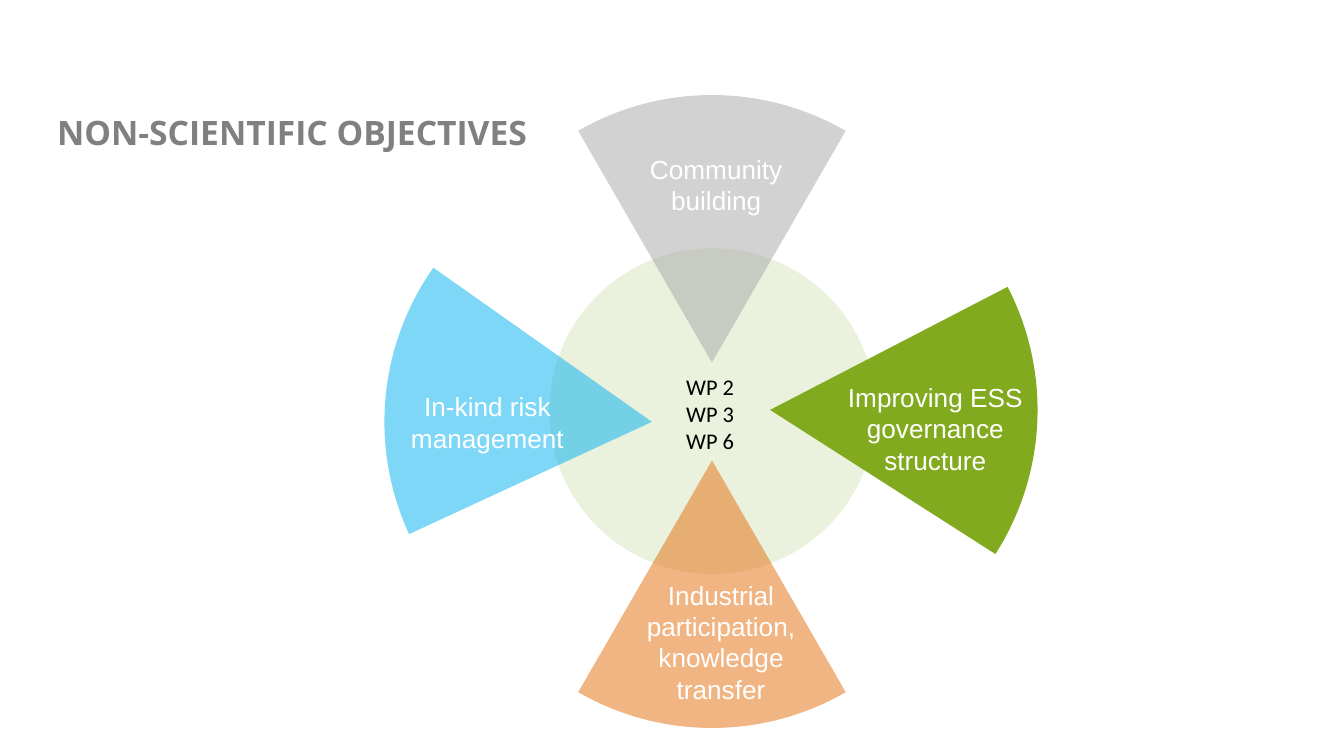
import math
from dataclasses import dataclass
from typing import Optional

import lxml.etree
import pptx
import pptx.dml.color
import pptx.enum.shapes
import pptx.enum.text
import pptx.oxml.ns
import pptx.util

Pt = pptx.util.Pt
qn = pptx.oxml.ns.qn
Align = pptx.enum.text.PP_ALIGN
Anchor = pptx.enum.text.MSO_ANCHOR


@dataclass(frozen=True)
class TextStyle:
    font: str
    size: float
    color: str
    bold: bool = False
    align: Align = Align.LEFT
    anchor: Anchor = Anchor.TOP


@dataclass(frozen=True)
class Theme:
    hub: str = "D7E4BD"
    community: str = "A6A6A6"
    governance: str = "82AA1E"
    risk: str = "00B0F0"
    industry: str = "E46C0A"
    translucent: int = 50
    title: TextStyle = TextStyle("Open Sans", 18, "808080", bold=True)
    label: TextStyle = TextStyle("Arial", 14, "FFFFFF", align=Align.CENTER, anchor=Anchor.MIDDLE)
    packages: TextStyle = TextStyle("Calibri", 12, "000000")


@dataclass(frozen=True)
class Box:
    left: float
    top: float
    width: float
    height: float

    def lengths(self) -> tuple:
        return tuple(Pt(v) for v in (self.left, self.top, self.width, self.height))


@dataclass(frozen=True)
class Objective:
    """Apex and start angle describe the wedge before its rotation."""
    text: str
    label_box: Box
    apex: tuple[float, float]
    start_angle: float
    rotation: float
    color: str
    opacity: Optional[int] = None


THEME = Theme()
WEDGE_RADIUS = 143.3
HALF_WEDGE = 30
HUB_BOX = Box(294.2, 133, 175, 174.5)
TITLE_BOX = Box(23.4, 56.2, 285.8, 28.8)
PACKAGES_BOX = Box(360.5, 196.2, 62.6, 51.1)

COMMUNITY = Objective("Community building", Box(329, 78.5, 109.4, 41),
                      (381.4, 194.2), 240, 0, THEME.community, THEME.translucent)
GOVERNANCE = Objective("Improving ESS governance structure", Box(432.3, 200.4, 137.5, 58.3),
                       (433.1, 179.7), 0, 332.6, THEME.governance)
RISK = Objective("In-kind risk management", Box(207.5, 205.6, 107.3, 41),
                 (326.6, 173.4), 120, 35.2, THEME.risk, THEME.translucent)
INDUSTRY = Objective("Industrial participation, knowledge transfer", Box(331.6, 306.4, 109.4, 74.9),
                     (381.4, 390), 240, 180, THEME.industry, THEME.translucent)


def paint(shape, color: str, opacity: Optional[int]) -> None:
    shape.shadow.inherit = False
    shape.line.fill.background()
    shape.fill.solid()
    shape.fill.fore_color.rgb = pptx.dml.color.RGBColor.from_string(color)
    if opacity is not None:
        rgb = shape.fill._xPr.find(qn("a:solidFill")).find(qn("a:srgbClr"))
        lxml.etree.SubElement(rgb, qn("a:alpha"), val=str(opacity * 1000))


def draw_wedge(shapes, objective: Objective) -> None:
    """Draw a sector whose arc is two Bézier curves, then turn it about its centre."""
    apex_x, apex_y = objective.apex

    def arc_point(degrees: float, tangent: float = 0) -> tuple:
        """Return the arc point, moved along the tangent by a share of the radius."""
        cosine, sine = math.cos(math.radians(degrees)), math.sin(math.radians(degrees))
        return (Pt(apex_x + WEDGE_RADIUS * (cosine - tangent * sine)),
                Pt(apex_y + WEDGE_RADIUS * (sine + tangent * cosine)))

    start, middle, end = (objective.start_angle + HALF_WEDGE * i for i in range(3))
    outline = shapes.build_freeform(*arc_point(start))
    outline.add_line_segments([arc_point(middle), arc_point(end), (Pt(apex_x), Pt(apex_y))])
    wedge = outline.convert_to_shape()

    handle = 4 / 3 * math.tan(math.radians(HALF_WEDGE / 4))
    segments = list(wedge._element.iter(qn("a:lnTo")))
    for segment, (a, b) in zip(segments, [(start, middle), (middle, end)]):
        segment.tag = qn("a:cubicBezTo")
        controls = [arc_point(a, handle), arc_point(b, -handle)]
        for index, (x, y) in enumerate(controls):
            point = lxml.etree.Element(qn("a:pt"), x=str(x - wedge.left), y=str(y - wedge.top))
            segment.insert(index, point)
    wedge.rotation = objective.rotation
    paint(wedge, objective.color, objective.opacity)


def write(frame, lines: list[str], style: TextStyle) -> None:
    frame.word_wrap = True
    frame.auto_size = pptx.enum.text.MSO_AUTO_SIZE.NONE
    frame.vertical_anchor = style.anchor
    font_values = {"name": style.font, "size": Pt(style.size), "bold": style.bold}
    for index, line in enumerate(lines):
        paragraph = frame.paragraphs[0] if index == 0 else frame.add_paragraph()
        paragraph.alignment = style.align
        run = paragraph.add_run()
        run.text = line
        for name, value in font_values.items():
            setattr(run.font, name, value)
        run.font.color.rgb = pptx.dml.color.RGBColor.from_string(style.color)


def place_title(slide, text: str) -> None:
    title = slide.shapes.title
    title.left, title.top, title.width, title.height = TITLE_BOX.lengths()
    write(title.text_frame, [text], THEME.title)


def add_text(slide, box: Box, lines: list[str], style: TextStyle) -> None:
    write(slide.shapes.add_textbox(*box.lengths()).text_frame, lines, style)


def main() -> None:
    presentation = pptx.Presentation()
    presentation.slide_width, presentation.slide_height = Pt(720), Pt(405)
    slide = presentation.slides.add_slide(presentation.slide_layouts.get_by_name("Title Only"))
    place_title(slide, "NON-SCIENTIFIC OBJECTIVES")

    wheel = slide.shapes.add_group_shape().shapes
    hub = wheel.add_shape(pptx.enum.shapes.MSO_SHAPE.OVAL, *HUB_BOX.lengths())
    paint(hub, THEME.hub, THEME.translucent)
    for objective in (COMMUNITY, GOVERNANCE, RISK):
        draw_wedge(wheel, objective)
    draw_wedge(slide.shapes, INDUSTRY)

    for objective in (COMMUNITY, GOVERNANCE, INDUSTRY, RISK):
        add_text(slide, objective.label_box, [objective.text], THEME.label)
    add_text(slide, PACKAGES_BOX, ["WP 2", "WP 3", "WP 6"], THEME.packages)

    presentation.save("out.pptx")


if __name__ == "__main__":
    main()
